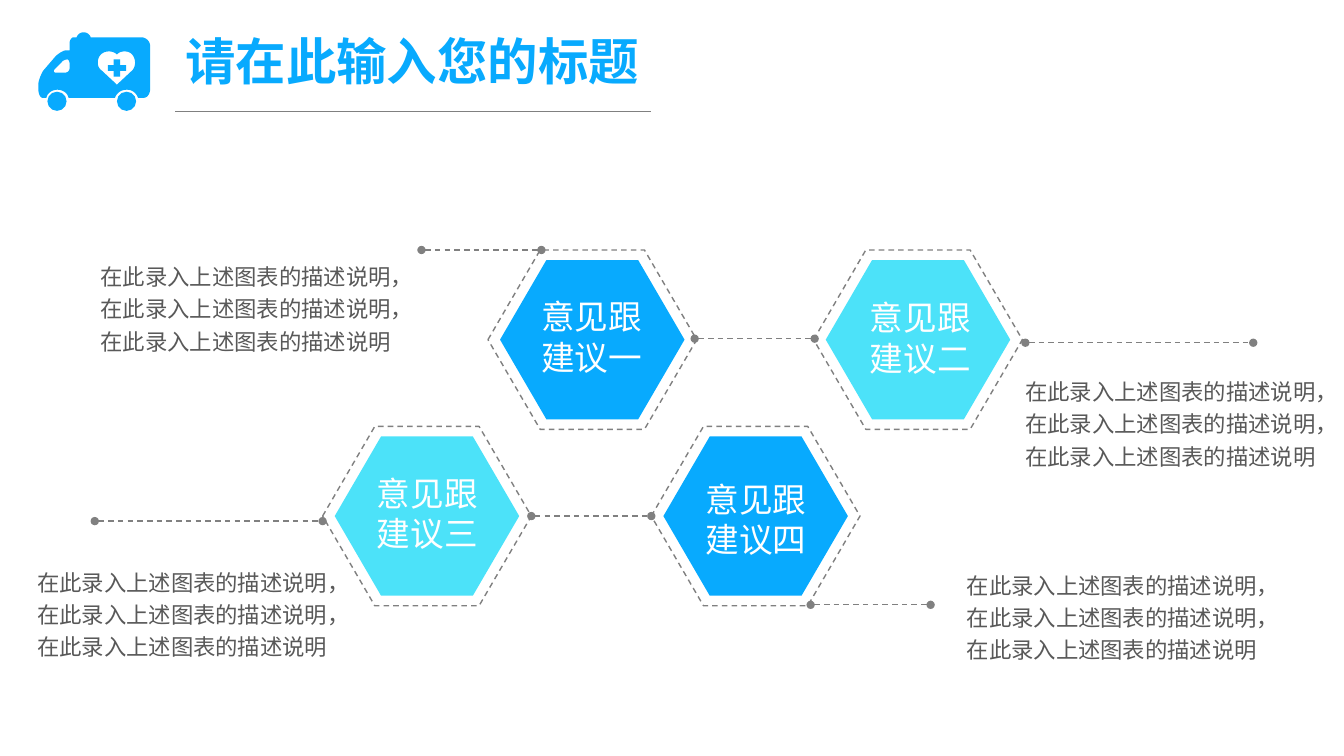
from lxml import etree
from pptx import Presentation
from pptx.dml.color import RGBColor
from pptx.enum.dml import MSO_LINE
from pptx.enum.shapes import MSO_CONNECTOR, MSO_SHAPE
from pptx.enum.text import MSO_AUTO_SIZE
from pptx.oxml.ns import qn
from pptx.util import Inches, Pt

STRAIGHT = MSO_CONNECTOR.STRAIGHT
HEXAGON, OVAL, CROSS = MSO_SHAPE.HEXAGON, MSO_SHAPE.OVAL, MSO_SHAPE.CROSS
DASH = MSO_LINE.DASH
FIT_SHAPE = MSO_AUTO_SIZE.SHAPE_TO_FIT_TEXT

BLUE = RGBColor(0x08, 0xAA, 0xFE)
CYAN = RGBColor(0x4C, 0xE2, 0xF9)
GRAY = RGBColor(0x80, 0x80, 0x80)
DARK_GRAY = RGBColor(0x59, 0x59, 0x59)
WHITE = RGBColor(0xFF, 0xFF, 0xFF)
FONT = "Noto Sans CJK SC"

DESCRIPTION = "在此录入上述图表的描述说明，在此录入上述图表的描述说明，在此录入上述图表的描述说明"

# Hundredths of an inch: two numbers are a corner, six are a Bezier curve.
VAN_BODY = [
    (102, 5), (52, 5), (51, 2, 48, 0, 45, 0), (42, 0, 39, 2, 38, 5),
    (35, 5), (33, 5, 31, 8, 31, 11), (31, 18), (27, 18),
    (25, 18, 20, 21, 17, 24), (5, 38), (3, 41, 0, 48, 0, 52), (0, 56),
    (0, 61, 2, 65, 4, 65), (8, 65), (9, 60, 14, 57, 19, 57),
    (24, 57, 29, 60, 30, 65), (76, 65), (78, 60, 82, 57, 88, 57),
    (93, 57, 97, 60, 99, 65), (105, 65), (108, 65, 111, 61, 111, 56),
    (111, 14), (111, 9, 107, 5, 102, 5),
]
VAN_WINDOW = [
    (31, 36), (31, 38, 29, 40, 27, 40), (17, 40), (15, 40, 15, 38, 16, 37),
    (23, 30), (24, 28, 27, 27, 29, 27), (30, 27, 31, 29, 31, 31),
]
VAN_HEART = [
    (93, 38), (78, 52), (63, 38), (60, 36, 59, 33, 59, 30),
    (59, 24, 63, 19, 70, 19), (73, 19, 76, 20, 78, 22),
    (80, 20, 82, 19, 86, 19), (92, 19, 96, 24, 96, 30),
    (96, 33, 95, 36, 93, 38),
]

# Outer left and top, fill, label, label offset from the outer hexagon.
SUGGESTIONS = [
    (4.84, 2.48, BLUE, "建议一", 0.43, 0.41),
    (8.07, 2.48, CYAN, "建议二", 0.46, 0.42),
    (3.2, 4.23, CYAN, "建议三", 0.44, 0.41),
    (6.46, 4.23, BLUE, "建议四", 0.44, 0.47),
]
# Left, height and length of each link.
LINKS = [
    (6.89, 3.36, 1.19), (5.27, 5.12, 1.19), (4.18, 2.48, 1.19),
    (0.94, 5.17, 2.26), (10.17, 3.4, 2.26), (8.04, 6, 1.19),
]
DESCRIPTION_CORNERS = [(0.9, 2.51), (0.27, 5.54), (10.07, 3.65), (9.49, 5.57)]


def paint(shape, color):
    shape.shadow.inherit = False
    shape.fill.solid()
    shape.fill.fore_color.rgb = color
    shape.line.fill.background()


def add_preset(slide, preset, left, top, width, height, color):
    shape = slide.shapes.add_shape(
        preset, Inches(left), Inches(top), Inches(width), Inches(height))
    paint(shape, color)
    return shape


def add_text(slide, left, top, width, height, lines, size, color, bold=False, wrap=False):
    box = slide.shapes.add_textbox(
        Inches(left), Inches(top), Inches(width), Inches(height))
    frame = box.text_frame
    frame.word_wrap = wrap
    frame.auto_size = FIT_SHAPE
    for index, line in enumerate(lines):
        paragraph = frame.add_paragraph() if index else frame.paragraphs[0]
        run = paragraph.add_run()
        run.text = line
        font = run.font
        font.size, font.bold, font.name = Pt(size), bold, FONT
        font.color.rgb = color
        east_asian = etree.SubElement(run._r.get_or_add_rPr(), qn("a:ea"))
        east_asian.set("typeface", FONT)
    return frame


def add_line(slide, left, top, length, width):
    line = slide.shapes.add_connector(
        STRAIGHT, Inches(left), Inches(top), Inches(left + length), Inches(top))
    line.line.color.rgb = GRAY
    line.line.width = Pt(width)
    etree.SubElement(line._element.spPr, qn("a:effectLst"))
    return line


def flatten(outline, steps=8):
    """Turn corners and Bezier curves into a list of points."""
    points = [outline[0]]
    for segment in outline[1:]:
        if len(segment) == 2:
            points.append(segment)
            continue
        start = points[-1]
        for step in range(1, steps + 1):
            t = step / steps
            points.append(tuple(
                (1 - t) ** 3 * start[axis]
                + 3 * (1 - t) ** 2 * t * segment[axis]
                + 3 * (1 - t) * t ** 2 * segment[axis + 2]
                + t ** 3 * segment[axis + 4]
                for axis in (0, 1)))
    return points


def add_ambulance(slide, left, top):
    add_preset(slide, CROSS, left + 0.69, top + 0.27, 0.18, 0.17, BLUE).adjustments[0] = 0.34
    for wheel_left in (0.09, 0.78):
        add_preset(slide, OVAL, left + wheel_left, top + 0.59, 0.19, 0.19, BLUE)
    builder = None
    for outline in (VAN_BODY, VAN_WINDOW, VAN_HEART):
        points = [(Inches(left + x / 100), Inches(top + y / 100))
                  for x, y in flatten(outline)]
        if builder is None:
            builder = slide.shapes.build_freeform(*points[0])
        else:
            builder.move_to(*points[0])
        builder.add_line_segments(points[1:], close=True)
    paint(builder.convert_to_shape(), BLUE)


def add_header(slide, left, top):
    add_text(slide, left + 1.36, top - 0.07, 4.76, 0.71,
             ["请在此输入您的标题"], 36, BLUE, bold=True)
    add_line(slide, left + 1.36, top + 0.78, 4.72, 0.5)
    add_ambulance(slide, left, top)


def add_hexagon_outline(slide, left, top):
    hexagon = add_preset(slide, HEXAGON, left, top, 2.07, 1.78, WHITE)
    hexagon.adjustments[0] = 0.291
    hexagon.fill.background()
    hexagon.line.color.rgb = GRAY
    hexagon.line.width = Pt(1)
    hexagon.line.dash_style = DASH


def add_link(slide, left, top, length):
    """Draw a dashed line with a dot at both ends."""
    link = add_line(slide, left, top, length, 1)
    link.line.dash_style = DASH
    for end in ("a:headEnd", "a:tailEnd"):
        etree.SubElement(link.line._get_or_add_ln(), qn(end)).set("type", "oval")


def add_suggestion(slide, left, top, color, label, label_left, label_top):
    hexagon = add_preset(slide, HEXAGON, left + 0.12, top + 0.1, 1.83, 1.58, color)
    hexagon.adjustments[0] = 0.291
    add_text(slide, left + label_left, top + label_top, 1.21, 0.91,
             ["意见跟", label], 24, WHITE)


def add_description(slide, left, top):
    frame = add_text(slide, left, top, 3.1, 1.04, [DESCRIPTION], 16, DARK_GRAY, wrap=True)
    paragraph = frame.paragraphs[0]
    paragraph.line_spacing = 1.2
    paragraph._p.get_or_add_pPr().set("hangingPunct", "1")


def main():
    presentation = Presentation()
    presentation.slide_width = Inches(13.33)
    presentation.slide_height = Inches(7.5)
    slide = presentation.slides.add_slide(presentation.slide_layouts[6])
    add_header(slide, 0.38, 0.32)
    for left, top, *_ in SUGGESTIONS:
        add_hexagon_outline(slide, left, top)
    for link in LINKS:
        add_link(slide, *link)
    for suggestion in SUGGESTIONS:
        add_suggestion(slide, *suggestion)
    for corner in DESCRIPTION_CORNERS:
        add_description(slide, *corner)
    presentation.save("out.pptx")


if __name__ == "__main__":
    main()
